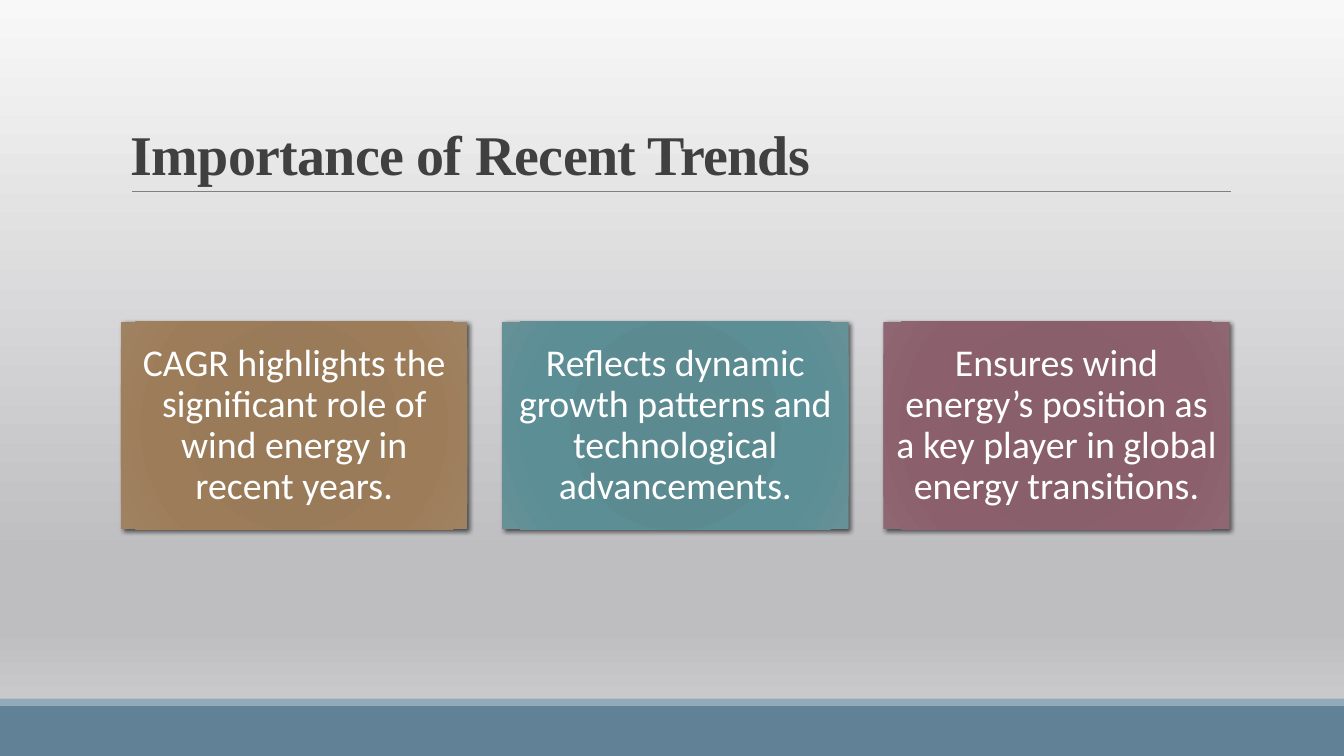
from lxml.etree import SubElement
from pptx import Presentation
from pptx.dml.color import RGBColor
from pptx.enum.shapes import MSO_CONNECTOR as Connector, MSO_SHAPE as Preset
from pptx.enum.text import MSO_ANCHOR as Anchor, PP_ALIGN as Align
from pptx.oxml.ns import qn
from pptx.util import Pt

# Content
TITLE = "Importance of Recent Trends"
CARDS = [
    ("CAGR highlights the significant role of wind energy in recent years.", "brown"),
    ("Reflects dynamic growth patterns and technological advancements.", "teal"),
    ("Ensures wind energy’s position as a key player in global energy transitions.", "plum"),
]
COLORS = {
    "title": "404040", "rule": "808080", "white": "FFFFFF", "shadow": "000000",
    "band": "618197", "band edge": "92A9B9",
}
GRADIENTS = {
    "background": [(0, "F8F8F8"), (74, "BEBEC1"), (83, "BEBEC1"), (100, "D4D4D5")],
    "brown": [(0, "997A56"), (34, "997B59"), (70, "9D7D59"), (100, "9F8262")],
    "teal": [(0, "598B91"), (34, "5B8B91"), (70, "5C8E95"), (100, "659197")],
    "plum": [(0, "885D6A"), (34, "895F6C"), (70, "8C5F6D"), (100, "8F6773")],
}

# Layout, in points
SLIDE_WIDTH, SLIDE_HEIGHT = 960, 540
LEFT, CONTENT_WIDTH = 86.4, 792
CARD_TOP, CARD_WIDTH, CARD_HEIGHT = 229.7, 247.5, 148.5
CARD_STEP = (CONTENT_WIDTH - CARD_WIDTH) / (len(CARDS) - 1)
BANDS = [("band", 504, 36), ("band edge", 499, 5)]


def color(name):
    return RGBColor.from_string(COLORS[name])


def add_rectangle(left, top, width, height):
    shape = slide.shapes.add_shape(
        Preset.RECTANGLE, Pt(left), Pt(top), Pt(width), Pt(height))
    shape.shadow.inherit = False
    shape.line.fill.background()
    return shape


def set_gradient(fill, element, stops, circular=False):
    fill.gradient()
    gradient = next(element.iter(qn("a:gradFill")))
    for child in list(gradient):
        gradient.remove(child)
    stop_list = SubElement(gradient, qn("a:gsLst"))
    for position, value in stops:
        stop = SubElement(stop_list, qn("a:gs"), pos=str(position * 1000))
        SubElement(stop, qn("a:srgbClr"), val=value)
    if circular:
        circle = SubElement(gradient, qn("a:path"), path="circle")
        SubElement(circle, qn("a:fillToRect"), {side: "100000" for side in "ltrb"})
    else:
        SubElement(gradient, qn("a:lin"), ang="5400000", scaled="0")


def add_shadow(shape):
    effects = next(shape.element.iter(qn("a:effectLst")))
    shadow = SubElement(effects, qn("a:outerShdw"), blurRad=str(Pt(3.5)),
                        dist=str(Pt(2)), dir="2700000", algn="tl", rotWithShape="0")
    shade = SubElement(shadow, qn("a:srgbClr"), val=COLORS["shadow"])
    SubElement(shade, qn("a:alpha"), val="60000")


def write(shape, text, *, font, size, ink, anchor, align, spacing,
          bold=False, inset=None, tracking=None):
    frame = shape.text_frame
    frame.word_wrap = True
    frame.vertical_anchor = anchor
    if inset is not None:
        frame.margin_left = frame.margin_right = Pt(inset)
        frame.margin_top = frame.margin_bottom = Pt(inset)
    paragraph = frame.paragraphs[0]
    paragraph.alignment = align
    paragraph.line_spacing = spacing
    run = paragraph.add_run()
    run.text = text
    run.font.name, run.font.size, run.font.bold = font, Pt(size), bold
    run.font.color.rgb = color(ink)
    if tracking is not None:
        run.font._element.set("spc", str(int(tracking * 100)))


presentation = Presentation()
presentation.slide_width, presentation.slide_height = Pt(SLIDE_WIDTH), Pt(SLIDE_HEIGHT)
slide = presentation.slides.add_slide(presentation.slide_layouts[6])
set_gradient(slide.background.fill, slide.element, GRADIENTS["background"])

# Bottom bands
for name, top, height in BANDS:
    band = add_rectangle(0, top, SLIDE_WIDTH, height)
    band.fill.solid()
    band.fill.fore_color.rgb = color(name)

# Title and its rule
rule = slide.shapes.add_connector(
    Connector.STRAIGHT, Pt(94.3), Pt(136.8), Pt(879), Pt(136.8))
rule.line.color.rgb = color("rule")
rule.line.width = Pt(0.5)
SubElement(rule.element.spPr, qn("a:effectLst"))

title = slide.shapes.add_textbox(Pt(LEFT), Pt(22.3), Pt(CONTENT_WIDTH), Pt(114.5))
write(title, TITLE, font="Times New Roman", size=40, ink="title", bold=True,
      anchor=Anchor.BOTTOM, align=Align.LEFT, spacing=0.85, tracking=-0.5)

# Cards
for index, (text, gradient_name) in enumerate(CARDS):
    card = add_rectangle(LEFT + index * CARD_STEP, CARD_TOP, CARD_WIDTH, CARD_HEIGHT)
    set_gradient(card.fill, card.element, GRADIENTS[gradient_name], circular=True)
    add_shadow(card)
    write(card, text, font="Calibri", size=27, ink="white", inset=8,
          anchor=Anchor.MIDDLE, align=Align.CENTER, spacing=0.9)

presentation.save("out.pptx")
